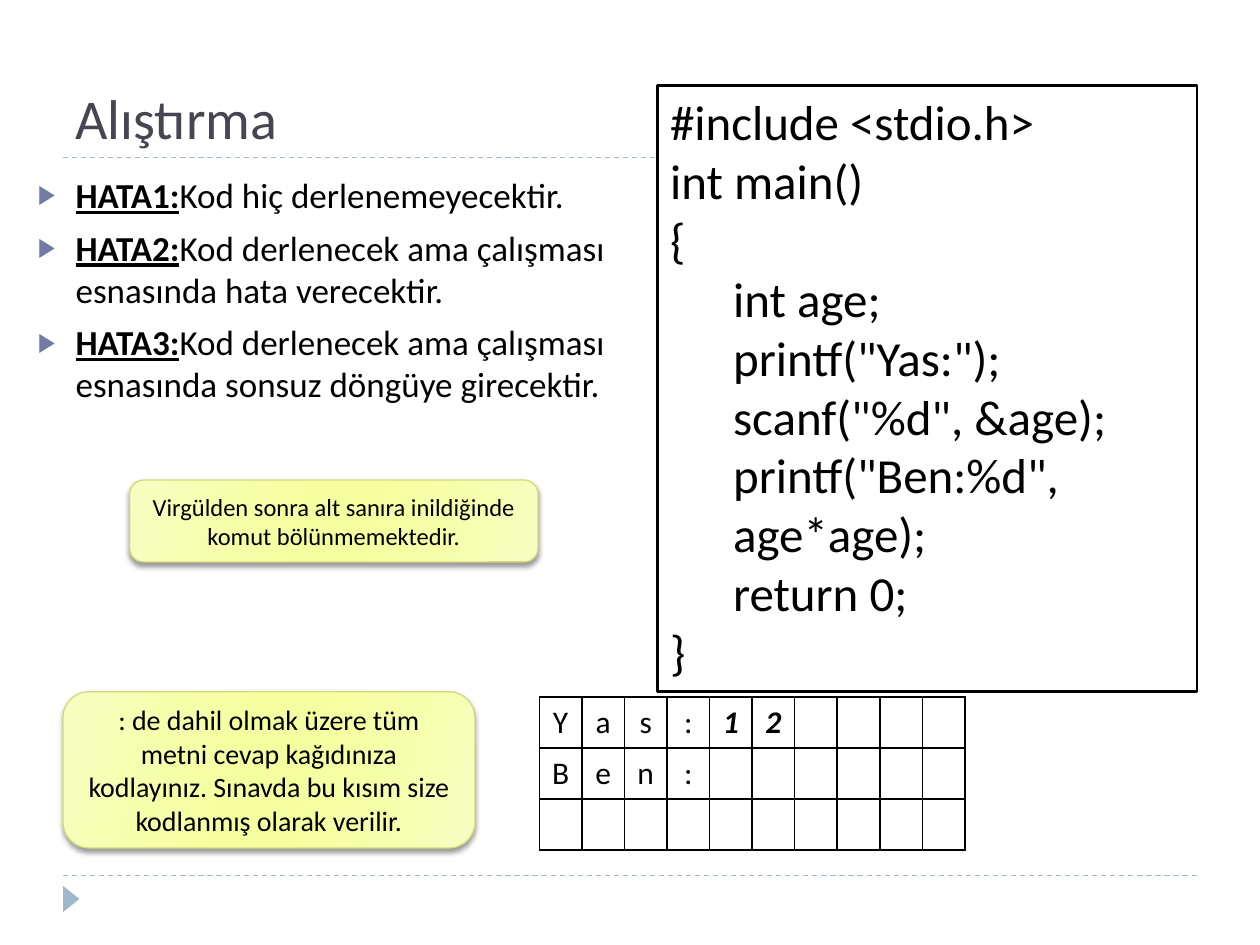
from dataclasses import dataclass
from itertools import product

from lxml.etree import SubElement
from pptx import Presentation
from pptx.dml.color import RGBColor
from pptx.enum.dml import MSO_LINE
from pptx.enum.shapes import MSO_CONNECTOR, MSO_SHAPE
from pptx.enum.text import MSO_ANCHOR, MSO_AUTO_SIZE, PP_ALIGN
from pptx.oxml import parse_xml
from pptx.oxml.ns import nsdecls, qn
from pptx.util import Inches, Pt

BLACK = RGBColor(0x00, 0x00, 0x00)
WHITE = RGBColor(0xFF, 0xFF, 0xFF)
SLATE = RGBColor(0x46, 0x46, 0x53)
STEEL = RGBColor(0x9F, 0xB8, 0xCD)
MARK = RGBColor(0x72, 0x7C, 0xA3)
OLIVE = RGBColor(0xD2, 0xDA, 0x7A)
PALE = RGBColor(0xF8, 0xFE, 0xC2)
LIME = RGBColor(0xF6, 0xFF, 0xA7)
LEMON = RGBColor(0xF6, 0xFF, 0x9F)
GLOW = [(0, PALE), (30, LIME), (45, LEMON), (55, LEMON), (73, LIME), (100, PALE)]

FONT = "Calibri"
COLS, ROWS = 100, 75

ERRORS = [
    ("HATA1:", "Kod hiç derlenemeyecektir."),
    ("HATA2:", "Kod derlenecek ama çalışması esnasında hata verecektir."),
    ("HATA3:", "Kod derlenecek ama çalışması esnasında sonsuz döngüye girecektir."),
]
CODE = [
    "#include <stdio.h>", "int main()", "{", "\tint age;", '\tprintf("Yas:");',
    '\tscanf("%d", &age);', '\tprintf("Ben:%d",', "\tage*age);", "\treturn 0;", "}",
]
SCREEN = ["Yas:12", "Ben:", ""]


@dataclass(frozen=True)
class Box:
    col: float
    row: float
    wide: float
    high: float


@dataclass(frozen=True)
class Note:
    box: Box
    text: str
    size: int


NOTES = [
    Note(Box(10.3, 38.1, 32.4, 6.5),
         "Virgülden sonra alt sanıra inildiğinde komut bölünmemektedir.", 14),
    Note(Box(5, 54.9, 32.7, 12.4),
         ": de dahil olmak üzere tüm metni cevap kağıdınıza kodlayınız. "
         "Sınavda bu kısım size kodlanmış olarak verilir.", 16),
]

deck = Presentation()
deck.slide_width, deck.slide_height = Inches(10), Inches(7.5)
slide = deck.slides.add_slide(deck.slide_layouts[1])
shapes = slide.shapes


def across(cols: float) -> int:
    return round(deck.slide_width * cols / COLS)


def down(rows: float) -> int:
    return round(deck.slide_height * rows / ROWS)


def spot(box: Box) -> tuple:
    return across(box.col), down(box.row), across(box.wide), down(box.high)


def move(shape, box: Box) -> None:
    shape.left, shape.top, shape.width, shape.height = spot(box)


def write(frame, lines: list, size: int, color=BLACK, align=PP_ALIGN.LEFT,
          anchor=MSO_ANCHOR.TOP, slant=False, bold=False, lead=False,
          space=0, bullet=False, tab=0) -> None:
    frame.word_wrap = True
    frame.auto_size = MSO_AUTO_SIZE.NONE
    frame.vertical_anchor = anchor
    for order, line in enumerate(lines):
        para = frame.add_paragraph() if order else frame.paragraphs[0]
        para.alignment = align
        para.space_before = Pt(space)
        parts = line if lead else (line,)
        for rank, part in enumerate(parts):
            run = para.add_run()
            run.text = part
            font = run.font
            font.name, font.size, font.italic = FONT, Pt(size), slant
            font.bold = bold or (lead and rank == 0)
            font.underline = lead and rank == 0
            font.color.rgb = color
        props = para._p.get_or_add_pPr()
        if bullet:
            props.set("marL", str(across(3)))
            props.set("indent", str(-across(3)))
            tint = SubElement(props, qn("a:buClr"))
            SubElement(tint, qn("a:srgbClr"), val=str(MARK))
            SubElement(props, qn("a:buSzPct"), val="76000")
            SubElement(props, qn("a:buFont"), typeface=FONT)
            SubElement(props, qn("a:buChar"), char="▶")
        if tab:
            stops = SubElement(props, qn("a:tabLst"))
            SubElement(stops, qn("a:tab"), pos=str(across(tab)), algn="l")


def rule(row: float) -> None:
    line = shapes.add_connector(MSO_CONNECTOR.STRAIGHT, across(5), down(row),
                                across(95), down(row))
    line.line.color.rgb = STEEL
    line.line.width = Pt(0.75)
    line.line.dash_style = MSO_LINE.DASH
    SubElement(line._element.spPr, qn("a:effectLst"))


def block(kind: MSO_SHAPE, box: Box, fill: RGBColor, edge=None, width=0.75):
    shape = shapes.add_shape(kind, *spot(box))
    shape.shadow.inherit = False
    shape.fill.solid()
    shape.fill.fore_color.rgb = fill
    if edge is None:
        shape.line.fill.background()
    else:
        shape.line.color.rgb = edge
        shape.line.width = Pt(width)
    return shape


def post(note: Note) -> None:
    shape = block(MSO_SHAPE.ROUNDED_RECTANGLE, note.box, LEMON, OLIVE)
    stops = "".join(f'<a:gs pos="{pos * 1000}"><a:srgbClr val="{color}"/></a:gs>'
                    for pos, color in GLOW)
    props = shape._element.spPr
    props.replace(props.find(qn("a:solidFill")), parse_xml(
        f'<a:gradFill {nsdecls("a")} rotWithShape="1"><a:gsLst>{stops}</a:gsLst>'
        '<a:lin ang="960000" scaled="0"/></a:gradFill>'))
    props.find(qn("a:effectLst")).append(parse_xml(
        f'<a:outerShdw {nsdecls("a")} blurRad="{Pt(3)}" dist="{Pt(2)}" dir="5400000"'
        ' rotWithShape="0"><a:srgbClr val="000000"><a:alpha val="40000"/>'
        '</a:srgbClr></a:outerShdw>'))
    write(shape.text_frame, [note.text], size=note.size,
          align=PP_ALIGN.CENTER, anchor=MSO_ANCHOR.MIDDLE)


def frame_cell(cell) -> None:
    props = cell._tc.get_or_add_tcPr()
    for side in ("lnL", "lnR", "lnT", "lnB"):
        props.append(parse_xml(
            f'<a:{side} {nsdecls("a")} w="{Pt(1)}"><a:solidFill>'
            f'<a:srgbClr val="{BLACK}"/></a:solidFill></a:{side}>'))
    cell.fill.solid()
    cell.fill.fore_color.rgb = WHITE
    cell.margin_left = cell.margin_right = 0


def draw_grid(box: Box, rows: list, count: int) -> None:
    table = shapes.add_table(len(rows), count, *spot(box)).table
    table.first_row = table.horz_banding = False
    for row, col in product(range(len(rows)), range(count)):
        cell = table.cell(row, col)
        frame_cell(cell)
        sign = rows[row][col:col + 1]
        if sign:
            typed = sign.isdigit()
            write(cell.text_frame, [sign], size=18, align=PP_ALIGN.CENTER,
                  bold=typed, slant=typed)


rule(69.5)
rule(12.5)
block(MSO_SHAPE.ISOSCELES_TRIANGLE, Box(4.6, 70.7, 2.1, 1.3), STEEL).rotation = 90

title, body = shapes.title, slide.placeholders[1]
move(title, Box(5, 1.7, 90, 10.8))
write(title.text_frame, ["Alıştırma"], size=32, color=SLATE, anchor=MSO_ANCHOR.BOTTOM)
move(body, Box(2, 13.3, 56.2, 54))
write(body.text_frame, ERRORS, size=20, lead=True, space=6, bullet=True)

draw_grid(Box(42.8, 55.3, 33.8, 12.15), SCREEN, 10)
code = block(MSO_SHAPE.RECTANGLE, Box(52.2, 6.8, 42.8, 48.1), WHITE, BLACK, 1.5)
write(code.text_frame, CODE, size=28, tab=5)
for note in NOTES:
    post(note)

deck.save("out.pptx")
